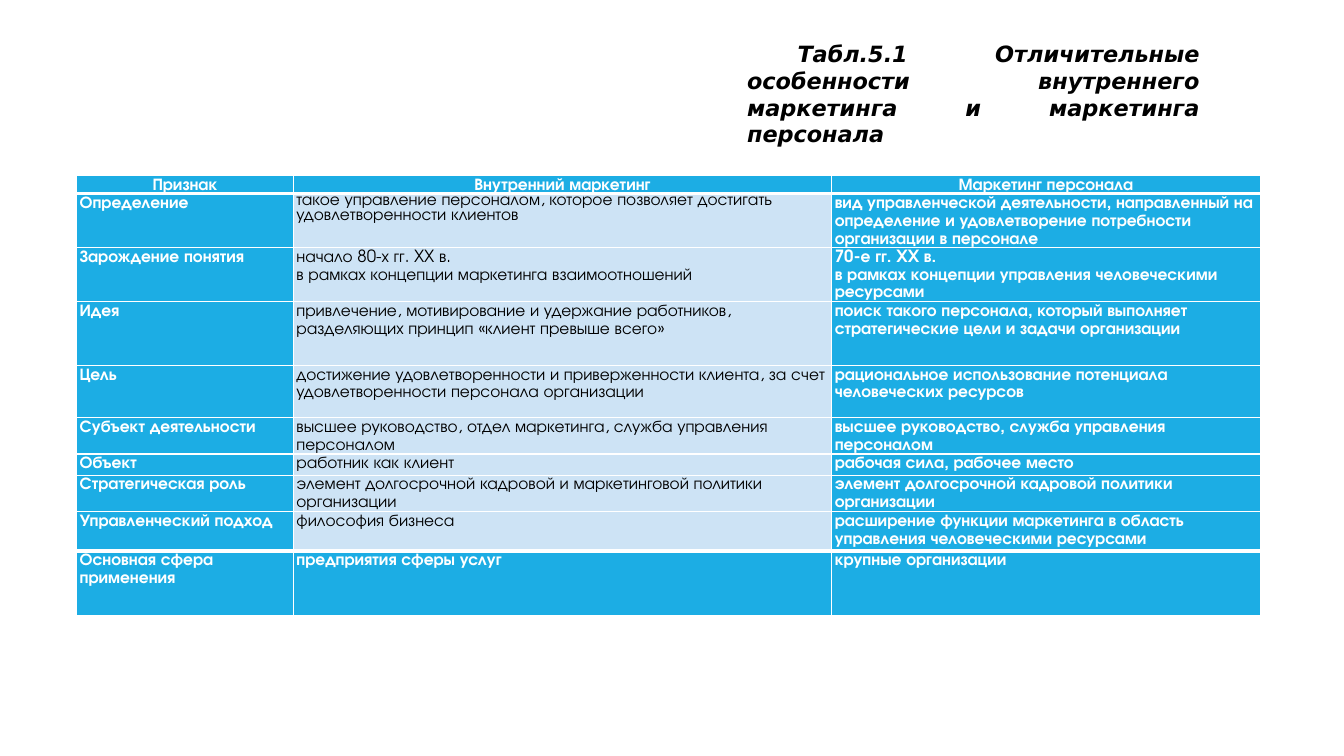
from dataclasses import dataclass

from lxml import etree
from pptx import Presentation
from pptx.dml.color import RGBColor
from pptx.enum.text import MSO_ANCHOR, MSO_AUTO_SIZE, PP_ALIGN
from pptx.oxml.ns import qn
from pptx.slide import Slide
from pptx.table import _Cell
from pptx.text.text import _Paragraph
from pptx.util import Inches, Pt

CENTER, LEFT, JUSTIFY = PP_ALIGN.CENTER, PP_ALIGN.LEFT, PP_ALIGN.JUSTIFY
TOP, MIDDLE = MSO_ANCHOR.TOP, MSO_ANCHOR.MIDDLE
FIT_SHAPE = MSO_AUTO_SIZE.SHAPE_TO_FIT_TEXT


@dataclass(frozen=True)
class Theme:
    accent: str = "1CADE4"
    pale: str = "CDE3F5"
    white: str = "FFFFFF"
    black: str = "000000"
    title_font: str = "DejaVu Sans"
    table_font: str = "TeX Gyre Adventor"
    title_size: int = 16
    table_size: int = 12
    line_height: float = 12.8
    tight_line_height: float = 10.8
    thin: int = 1
    thick: int = 3


@dataclass(frozen=True)
class Row:
    height: float
    feature: str
    internal: str
    personnel: str
    tight: bool = False


THEME = Theme()
TITLE = "Табл.5.1 Отличительные особенности внутреннего маркетинга и маркетинга персонала"
COL_WIDTHS = (2.15, 5.34, 4.25)
ROWS = (
    Row(0.18, "Признак", "Внутренний маркетинг", "Маркетинг персонала"),
    Row(0.53, "Определение",
        "такое управление персоналом, которое позволяет достигать удовлетворенности клиентов",
        "вид управленческой деятельности, направленный на определение и удовлетворение "
        "потребности организации в персонале", tight=True),
    Row(0.54, "Зарождение понятия",
        "начало 80-х гг. XX в.\nв рамках концепции маркетинга взаимоотношений",
        "70-е гг. XX в.\nв рамках концепции управления человеческими ресурсами"),
    Row(0.63, "Идея",
        "привлечение, мотивирование и удержание работников, разделяющих принцип "
        "«клиент превыше всего»",
        "поиск такого персонала, который выполняет стратегические цели и задачи организации"),
    Row(0.52, "Цель",
        "достижение удовлетворенности и приверженности клиента, за счет "
        "удовлетворенности персонала организации",
        "рациональное использование потенциала человеческих ресурсов"),
    Row(0.36, "Субъект деятельности",
        "высшее руководство, отдел маркетинга, служба управления персоналом",
        "высшее руководство, служба управления персоналом"),
    Row(0.21, "Объект", "работник как клиент", "рабочая сила, рабочее место"),
    Row(0.36, "Стратегическая роль",
        "элемент долгосрочной кадровой и маркетинговой политики организации",
        "элемент долгосрочной кадровой политики организации"),
    Row(0.39, "Управленческий подход", "философия бизнеса",
        "расширение функции маркетинга в область управления человеческими ресурсами"),
    Row(0.64, "Основная сфера применения", "предприятия сферы услуг", "крупные организации"),
)
LAST = len(ROWS) - 1


def apply(target: object, values: dict) -> None:
    for name, value in values.items():
        setattr(target, name, value)


def style_paragraph(p: _Paragraph, color: str, font: dict, layout: dict) -> None:
    apply(p, layout)
    for r in p.runs:
        apply(r.font, font)
        r.font.color.rgb = RGBColor.from_string(color)


def add_borders(cell: _Cell, widths: dict[str, int]) -> None:
    props = cell._tc.get_or_add_tcPr()
    for i, (side, width) in enumerate(widths.items()):
        line = etree.Element(qn(f"a:ln{side}"), w=str(Pt(width)))
        fill = etree.SubElement(line, qn("a:solidFill"))
        etree.SubElement(fill, qn("a:srgbClr"), val=THEME.white)
        props.insert(i, line)


def add_title(s: Slide) -> None:
    title = s.shapes.title
    apply(title, {"left": Inches(7.31), "top": Inches(0.34),
                  "width": Inches(4.69), "height": Inches(1.18)})
    tf = title.text_frame
    tf.text = TITLE
    apply(tf, {"word_wrap": True, "auto_size": FIT_SHAPE, "vertical_anchor": MIDDLE})
    p = tf.paragraphs[0]
    p._p.get_or_add_pPr().set("indent", str(Inches(0.5)))
    font = {"name": THEME.title_font, "size": Pt(THEME.title_size),
            "bold": True, "italic": True}
    style_paragraph(p, THEME.black, font, {"alignment": JUSTIFY})


def fill_cell(cell: _Cell, text: str, row_no: int, col_no: int) -> None:
    pale = col_no == 1 and 0 < row_no < LAST
    tight = pale and ROWS[row_no].tight
    cell.text = text
    apply(cell, {"margin_left": Inches(0.03), "margin_right": Inches(0.03),
                 "margin_top": 0, "margin_bottom": 0, "vertical_anchor": TOP})
    cell.fill.solid()
    cell.fill.fore_color.rgb = RGBColor.from_string(THEME.pale if pale else THEME.accent)
    add_borders(cell, {
        "L": THEME.thin,
        "R": THEME.thin,
        "T": THEME.thick if row_no in (1, LAST) else THEME.thin,
        "B": THEME.thick if row_no in (0, LAST - 1) else THEME.thin,
    })
    font = {"name": THEME.table_font, "size": Pt(THEME.table_size), "bold": not pale}
    layout = {"alignment": LEFT if row_no else CENTER,
              "line_spacing": Pt(THEME.tight_line_height if tight else THEME.line_height)}
    for p in cell.text_frame.paragraphs:
        style_paragraph(p, THEME.black if pale else THEME.white, font, layout)


def add_comparison(s: Slide) -> None:
    height = sum(row.height for row in ROWS)
    table = s.shapes.add_table(len(ROWS), len(COL_WIDTHS), Inches(0.76), Inches(1.74),
                               Inches(sum(COL_WIDTHS)), Inches(height)).table
    for column, width in zip(table.columns, COL_WIDTHS):
        column.width = Inches(width)
    for row_no, row in enumerate(ROWS):
        table.rows[row_no].height = Inches(row.height)
        for col_no, text in enumerate((row.feature, row.internal, row.personnel)):
            fill_cell(table.cell(row_no, col_no), text, row_no, col_no)


def main() -> None:
    prs = Presentation()
    apply(prs, {"slide_width": Inches(13.33), "slide_height": Inches(7.5)})
    s = prs.slides.add_slide(prs.slide_layouts[5])
    add_comparison(s)
    add_title(s)
    prs.save("out.pptx")


if __name__ == "__main__":
    main()
